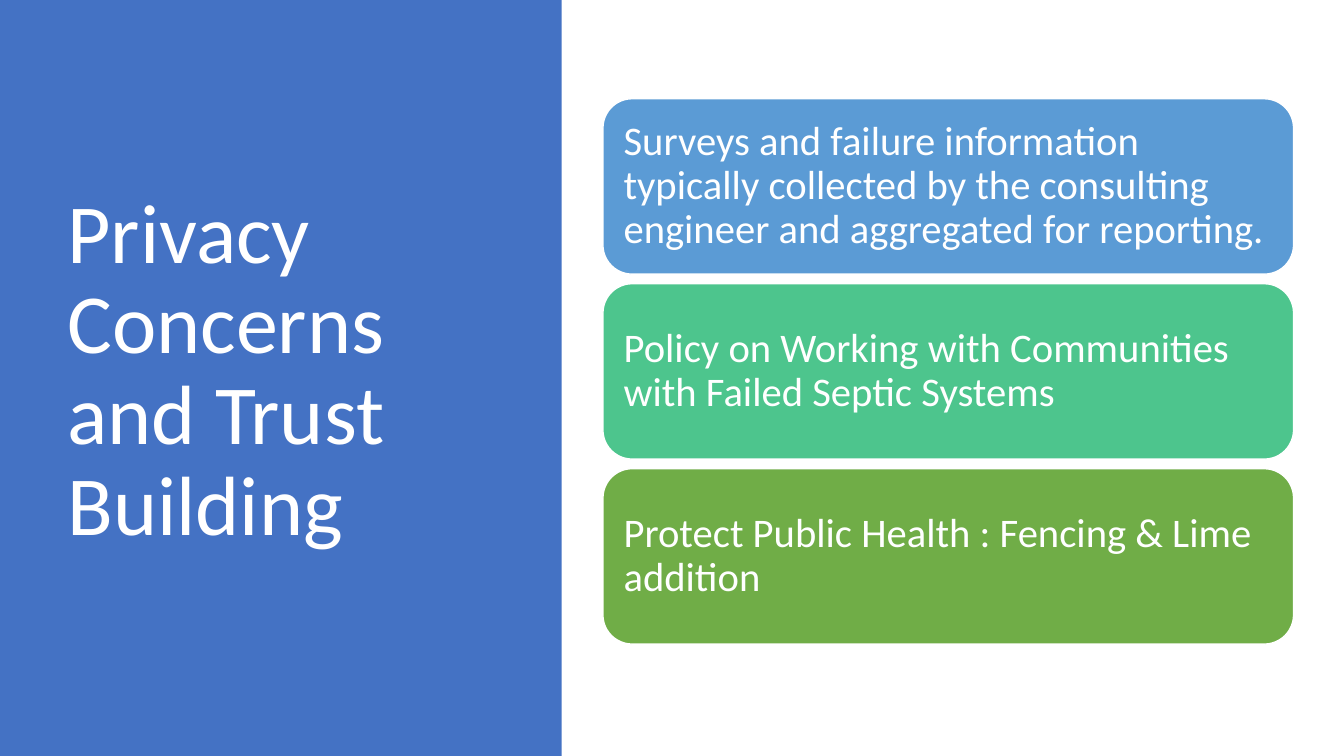
"""Build the slide on privacy concerns and trust building."""
from pptx import Presentation
from pptx.dml.color import RGBColor
from pptx.enum import shapes, text
from pptx.util import Inches, Pt

WHITE = RGBColor(0xFF, 0xFF, 0xFF)
PANEL_BLUE = RGBColor(0x44, 0x72, 0xC4)
SKY = RGBColor(0x5B, 0x9B, 0xD5)
MINT = RGBColor(0x4D, 0xC5, 0x8D)
GREEN = RGBColor(0x70, 0xAD, 0x47)

TITLE = "Privacy Concerns and Trust Building"
CARDS = [
    ("Surveys and failure information typically collected by the consulting "
     "engineer and aggregated for reporting.", SKY),
    ("Policy on Working with Communities with Failed Septic Systems", MINT),
    ("Protect Public Health : Fencing & Lime addition", GREEN),
]
CARD_LEFT, CARD_TOP, CARD_WIDTH, CARD_HEIGHT = 5.98, 0.98, 6.85, 1.74
CARD_PITCH = 1.835
FRAME = {"word_wrap": True, "auto_size": text.MSO_AUTO_SIZE.NONE,
         "vertical_anchor": text.MSO_ANCHOR.MIDDLE}
INSETS = dict.fromkeys(
    ("margin_left", "margin_top", "margin_right", "margin_bottom"), Inches(0.12))


def set_all(target, values):
    """Set every attribute in values on target."""
    for name, value in values.items():
        setattr(target, name, value)


def write(sp, content, size, frame):
    """Fill a shape with left-aligned white text."""
    tf = sp.text_frame
    set_all(tf, frame)
    p = tf.paragraphs[0]
    set_all(p, {"alignment": text.PP_ALIGN.LEFT, "line_spacing": 0.9})
    r = p.add_run()
    r.text = content
    set_all(r.font, {"size": Pt(size), "name": "Calibri"})
    r.font.color.rgb = WHITE


def add_block(s, kind, box, color):
    """Add a filled shape without a shadow."""
    sp = s.shapes.add_shape(kind, *map(Inches, box))
    sp.shadow.inherit = False
    sp.fill.solid()
    sp.fill.fore_color.rgb = color
    return sp


def main():
    """Lay out the panel, title and cards."""
    prs = Presentation()
    prs.slide_width, prs.slide_height = Inches(13.33), Inches(7.5)
    s = prs.slides.add_slide(prs.slide_layouts[5])

    title = s.shapes.title
    set_all(title, {"left": Inches(0.57), "top": Inches(0.68),
                    "width": Inches(4.16), "height": Inches(6.02)})
    write(title, TITLE, 60, FRAME)

    panel = add_block(s, shapes.MSO_SHAPE.RECTANGLE, (0, 0, 5.57, 7.5), PANEL_BLUE)
    panel.line.fill.background()
    title.element.addprevious(panel.element)

    for i, (content, color) in enumerate(CARDS):
        box = (CARD_LEFT, CARD_TOP + i * CARD_PITCH, CARD_WIDTH, CARD_HEIGHT)
        card = add_block(s, shapes.MSO_SHAPE.ROUNDED_RECTANGLE, box, color)
        card.line.color.rgb = WHITE
        card.line.width = Pt(1)
        write(card, content, 29, FRAME | INSETS)

    prs.save("out.pptx")


if __name__ == "__main__":
    main()
